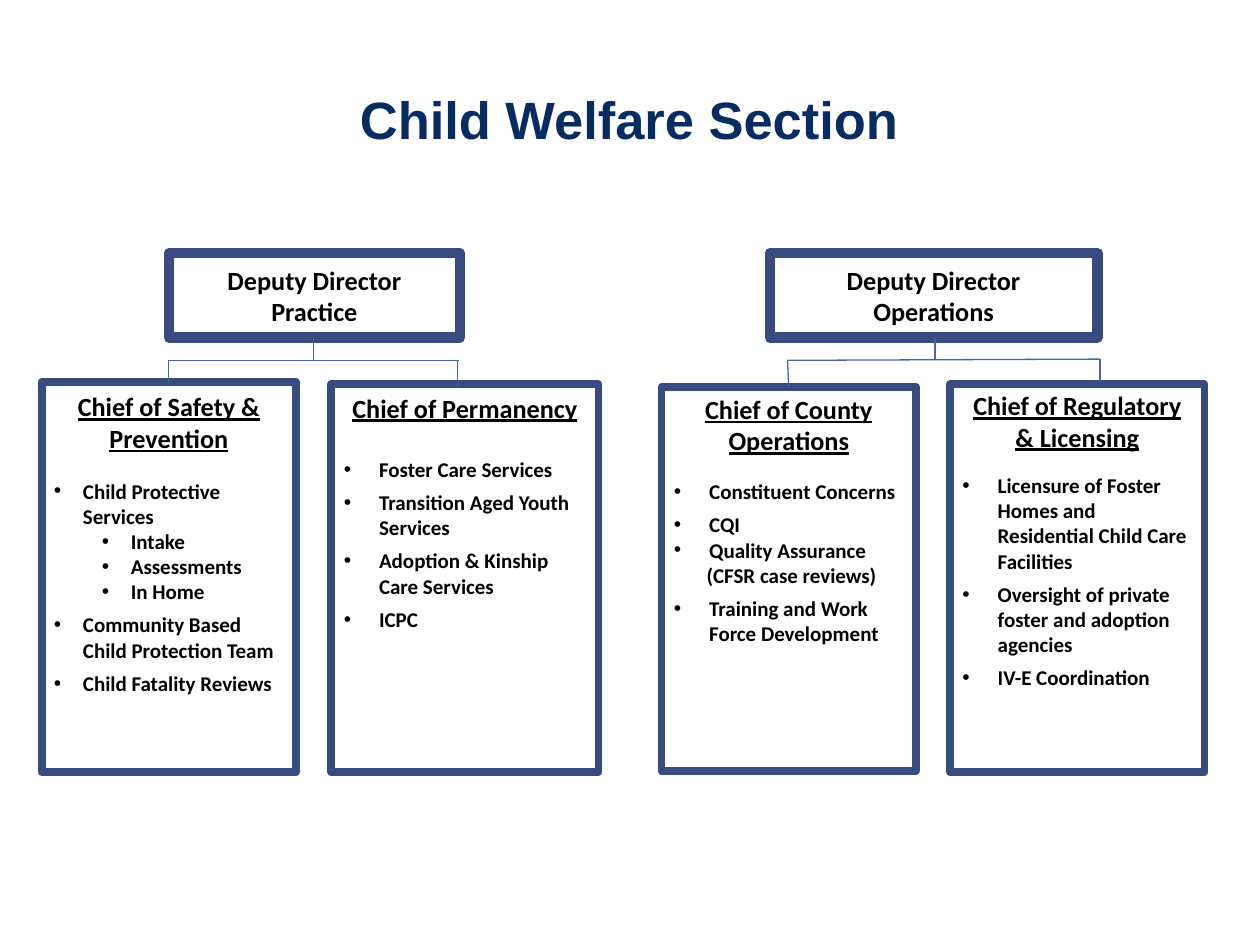
"""Builds the Child Welfare Section organisation chart slide."""
from dataclasses import dataclass

from lxml.etree import SubElement
from pptx import Presentation
from pptx.dml.color import RGBColor
from pptx.enum.shapes import MSO_CONNECTOR, MSO_SHAPE
from pptx.enum.text import MSO_ANCHOR, PP_ALIGN
from pptx.oxml.ns import qn
from pptx.util import Inches, Pt

NAVY = RGBColor(0x07, 0x2C, 0x62)
BORDER = RGBColor(0x37, 0x4B, 0x7F)
LINK = RGBColor(0x46, 0x63, 0xAB)
WHITE = RGBColor(0xFF, 0xFF, 0xFF)
BLACK = RGBColor(0x00, 0x00, 0x00)


@dataclass
class Item:
    text: str
    level: int = 0
    before: float = 4.5
    bullet: bool = True


@dataclass
class Deputy:
    left: float
    width: float
    area: str


@dataclass
class Chief:
    left: float
    top: float
    width: float
    height: float
    inset: float
    heading: list[str]
    gap: float
    indent: float
    items: list[Item]


@dataclass
class Link:
    x1: float
    y1: float
    x2: float
    y2: float


DEPUTIES = [Deputy(1.34, 2.31, "Practice"), Deputy(6.11, 2.6, "Operations")]

CHIEFS = [
    Chief(0.33, 3.03, 2.02, 3.1, 0.07, ["Chief of Safety &", "Prevention"], 14, 0.23, [
        Item("Child Protective Services"),
        Item("Intake", 1, 0),
        Item("Assessments", 1, 0),
        Item("In Home", 1, 0),
        Item("Community Based Child Protection Team"),
        Item("Child Fatality Reviews"),
    ]),
    Chief(2.63, 3.05, 2.12, 3.08, 0.06, ["Chief of Permanency"], 19, 0.28, [
        Item("Foster Care Services"),
        Item("Transition Aged Youth Services"),
        Item("Adoption & Kinship Care Services"),
        Item("ICPC"),
    ]),
    Chief(5.25, 3.07, 2.02, 3.05, 0.05, ["Chief of County Operations"], 13, 0.28, [
        Item("Constituent Concerns"),
        Item("CQI"),
        Item("Quality Assurance", before=0),
        Item("(CFSR case reviews)", before=0, bullet=False),
        Item("Training and Work Force Development"),
    ]),
    Chief(7.54, 3.05, 2.02, 3.08, 0.04, ["Chief of Regulatory & Licensing"], 11.5, 0.28, [
        Item("Licensure of Foster Homes and Residential Child Care Facilities"),
        Item("Oversight of private foster and adoption agencies"),
        Item("IV-E Coordination"),
    ]),
]

LINKS = [
    Link(2.49, 2.68, 2.49, 2.86),
    Link(1.34, 2.86, 3.64, 2.86),
    Link(3.63, 2.86, 3.63, 3.07),
    Link(1.34, 2.86, 1.34, 3.03),
    Link(7.42, 2.68, 7.42, 2.86),
    Link(6.25, 2.86, 8.73, 2.85),
    Link(6.25, 2.86, 6.26, 3.07),
    Link(8.73, 2.85, 8.73, 3.03),
]


def add_paragraph(tf, first: bool, align: PP_ALIGN):
    p = tf.paragraphs[0] if first else tf.add_paragraph()
    p.alignment = align
    return p


def add_run(p, text: str, size: float, color=BLACK, font="Calibri", underline=False) -> None:
    r = p.add_run()
    r.text = text
    r.font.name = font
    r.font.size = Pt(size)
    r.font.bold = True
    r.font.color.rgb = color
    if underline:
        r.font.underline = True


def set_indent(p, left: float, hanging: float) -> None:
    pPr = p._p.get_or_add_pPr()
    pPr.set("marL", str(Inches(left)))
    pPr.set("indent", str(-Inches(hanging)))
    if hanging:
        SubElement(pPr, qn("a:buFont"), typeface="Arial")
        SubElement(pPr, qn("a:buChar"), char="•")


def add_title(s, text: str) -> None:
    tf = s.shapes.add_textbox(Inches(1.01), Inches(0.69), Inches(7.97), Inches(0.98)).text_frame
    tf.word_wrap = True
    tf.margin_left = tf.margin_right = tf.margin_top = tf.margin_bottom = 0
    add_run(add_paragraph(tf, True, PP_ALIGN.CENTER), text, 30, NAVY, "Arial")


def add_box(s, left: float, top: float, width: float, height: float, border: float):
    sp = s.shapes.add_shape(
        MSO_SHAPE.RECTANGLE, Inches(left), Inches(top), Inches(width), Inches(height))
    sp.shadow.inherit = False
    sp.fill.solid()
    sp.fill.fore_color.rgb = WHITE
    sp.line.color.rgb = BORDER
    sp.line.width = Pt(border)
    sp.text_frame.word_wrap = True
    return sp.text_frame


def add_deputy(s, deputy: Deputy) -> None:
    tf = add_box(s, deputy.left, 2.01, deputy.width, 0.67, 6)
    tf.vertical_anchor = MSO_ANCHOR.MIDDLE
    for i, text in enumerate(["Deputy Director", deputy.area]):
        add_run(add_paragraph(tf, i == 0, PP_ALIGN.CENTER), text, 15)


def add_chief(s, chief: Chief) -> None:
    tf = add_box(s, chief.left, chief.top, chief.width, chief.height, 4.5)
    tf.vertical_anchor = MSO_ANCHOR.TOP
    tf.margin_top = Inches(chief.inset)
    for i, text in enumerate(chief.heading):
        add_run(add_paragraph(tf, i == 0, PP_ALIGN.CENTER), text, 15, underline=True)
    for i, item in enumerate(chief.items):
        p = add_paragraph(tf, False, PP_ALIGN.LEFT)
        p.level = item.level
        p.space_before = Pt(item.before if i else chief.gap)
        if item.bullet:
            set_indent(p, chief.indent + 0.38 * item.level, chief.indent)
        else:
            set_indent(p, 0.26, 0)
        add_run(p, item.text, 12)


def add_link(s, link: Link) -> None:
    line = s.shapes.add_connector(
        MSO_CONNECTOR.STRAIGHT,
        Inches(link.x1), Inches(link.y1), Inches(link.x2), Inches(link.y2))
    line.line.color.rgb = LINK
    line.line.width = Pt(0.75)
    SubElement(line._element.spPr, qn("a:effectLst"))


def main() -> None:
    prs = Presentation()
    prs.slide_width, prs.slide_height = Inches(10), Inches(7.5)
    s = prs.slides.add_slide(prs.slide_layouts[6])
    add_title(s, "Child Welfare Section")
    for deputy in DEPUTIES:
        add_deputy(s, deputy)
    for chief in CHIEFS:
        add_chief(s, chief)
    for link in LINKS:
        add_link(s, link)
    prs.save("out.pptx")


if __name__ == "__main__":
    main()
